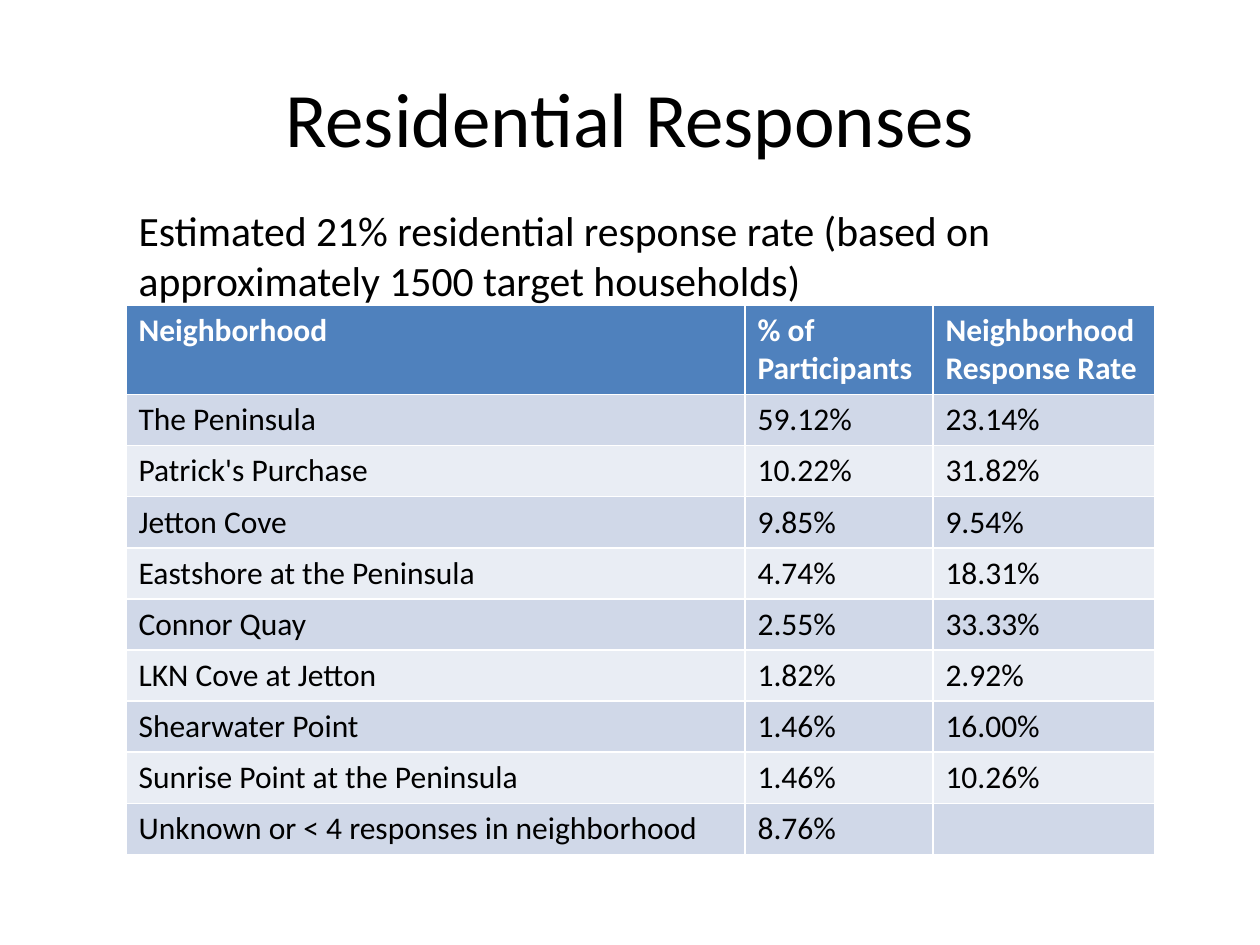
from pptx import Presentation
from pptx.util import Pt
from pptx.dml.color import RGBColor
from pptx.enum.text import PP_ALIGN, MSO_ANCHOR, MSO_AUTO_SIZE
from lxml.etree import SubElement
from pptx.oxml.ns import qn

TITLE = "Residential Responses"
LEAD = ("Estimated 21% residential response rate "
        "(based on approximately 1500 target households)")
HEAD = ("Neighborhood", "% of\nParticipants", "Neighborhood Response Rate")
ROWS = [
    ("The Peninsula", "59.12%", "23.14%"),
    ("Patrick's Purchase", "10.22%", "31.82%"),
    ("Jetton Cove", "9.85%", "9.54%"),
    ("Eastshore at the Peninsula", "4.74%", "18.31%"),
    ("Connor Quay", "2.55%", "33.33%"),
    ("LKN Cove at Jetton", "1.82%", "2.92%"),
    ("Shearwater Point", "1.46%", "16.00%"),
    ("Sunrise Point at the Peninsula", "1.46%", "10.26%"),
    ("Unknown or < 4 responses in neighborhood", "8.76%", ""),
]
WIDTHS = (619, 188, 222)
HEAD_H, ROW_H = 88, 51
BLUE, BANDS = "4F81BD", ("D0D8E8", "E9EDF4")
BLACK, WHITE = "000000", "FFFFFF"


def px(n):
    return round(n * 914400 / 126)


def color(code):
    return RGBColor.from_string(code)


def place(shape, *box):
    shape.left, shape.top, shape.width, shape.height = map(px, box)


def write(frame, text, size, code, bold=False):
    for i, line in enumerate(text.split("\n")):
        para = frame.add_paragraph() if i else frame.paragraphs[0]
        run = para.add_run()
        run.text = line
        font = run.font
        font.name, font.size, font.bold = "Calibri", Pt(size), bold
        font.color.rgb = color(code)


def main():
    deck = Presentation()
    deck.slide_width, deck.slide_height = px(1260), px(945)
    slide = deck.slides.add_slide(deck.slide_layouts[1])

    title = slide.shapes.title
    place(title, 63, 38, 1134, 157)
    frame = title.text_frame
    frame.vertical_anchor = MSO_ANCHOR.MIDDLE
    write(frame, TITLE, 44, BLACK)
    frame.paragraphs[0].alignment = PP_ALIGN.CENTER

    body = slide.placeholders[1]
    place(body, 63, 199, 1134, 95)
    frame = body.text_frame
    frame.auto_size = MSO_AUTO_SIZE.NONE
    write(frame, LEAD, 23.8, BLACK)
    para = frame.paragraphs[0]
    para.level = 1
    props = para._p.get_or_add_pPr()
    props.set("marL", str(px(63)))
    props.set("indent", "0")
    SubElement(props, qn("a:buNone"))

    data = [HEAD] + ROWS
    high = HEAD_H + ROW_H * len(ROWS)
    table = slide.shapes.add_table(
        len(data), len(WIDTHS), px(126), px(305), px(sum(WIDTHS)), px(high)).table
    for col, width in zip(table.columns, WIDTHS):
        col.width = px(width)
    for r, row in enumerate(data):
        table.rows[r].height = px(ROW_H if r else HEAD_H)
        for c, text in enumerate(row):
            cell = table.cell(r, c)
            cell.fill.solid()
            cell.fill.fore_color.rgb = color(BANDS[(r - 1) % 2] if r else BLUE)
            if text:
                write(cell.text_frame, text, 18, BLACK if r else WHITE, r == 0)

    deck.save("out.pptx")


if __name__ == "__main__":
    main()
